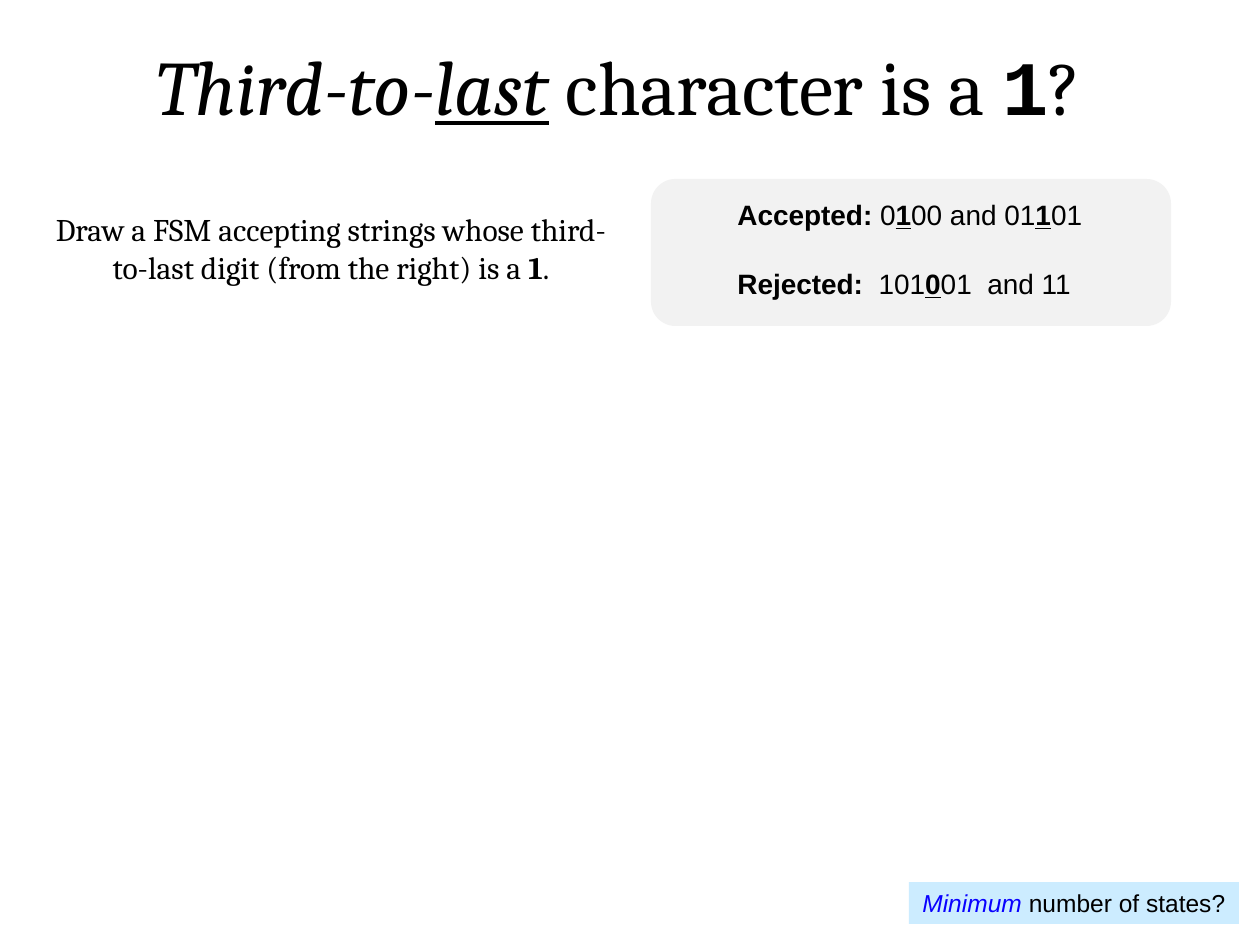
from pptx import Presentation
from pptx.dml.color import RGBColor
from pptx.enum.shapes import MSO_SHAPE
from pptx.enum.text import MSO_ANCHOR, MSO_AUTO_SIZE, PP_ALIGN
from pptx.util import Pt

CENTER, LEFT = PP_ALIGN.CENTER, PP_ALIGN.LEFT
TOP, MIDDLE = MSO_ANCHOR.TOP, MSO_ANCHOR.MIDDLE
RECTANGLE, ROUNDED = MSO_SHAPE.RECTANGLE, MSO_SHAPE.ROUNDED_RECTANGLE
EMU_PER_PX = 914400 / 126
TITLE_ONLY = 5


def px(*lengths):
    return [round(length * EMU_PER_PX) for length in lengths]


def write(para, text, size, font="Arial", color="000000", bold=False, italic=False, underline=False):
    span = para.add_run()
    span.text = text
    span.font.size = Pt(size)
    span.font.name = font
    span.font.color.rgb = RGBColor.from_string(color)
    span.font.bold = bold
    span.font.italic = italic
    span.font.underline = underline


deck = Presentation()
deck.slide_width, deck.slide_height = px(1260, 945)
page = deck.slides.add_slide(deck.slide_layouts[TITLE_ONLY])

# Filled panels
panels = []
for kind, bounds, fill in [
    (ROUNDED, (651, 179, 520, 147), "F2F2F2"),
    (RECTANGLE, (909, 882, 330, 42), "CCECFF"),
]:
    panel = page.shapes.add_shape(kind, *px(*bounds))
    panel.shadow.inherit = False
    panel.fill.solid()
    panel.fill.fore_color.rgb = RGBColor.from_string(fill)
    panel.line.fill.background()
    panels.append(panel)
states_tag = panels[1]

# Text frames
title = page.shapes.title
title.left, title.top, title.width, title.height = px(66, 32, 1106, 105)
task = page.shapes.add_textbox(*px(43, 204, 576, 89))
examples = page.shapes.add_textbox(*px(725, 203, 435, 107))
for box, align, anchor, wrap in [
    (title, CENTER, TOP, True),
    (task, CENTER, TOP, True),
    (examples, LEFT, TOP, True),
    (states_tag, CENTER, MIDDLE, False),
]:
    frame = box.text_frame
    frame.auto_size = MSO_AUTO_SIZE.NONE
    frame.word_wrap = wrap
    frame.vertical_anchor = anchor
    frame.paragraphs[0].alignment = align

para = title.text_frame.paragraphs[0]
write(para, "Third-to-", 44, "Cambria", italic=True)
write(para, "last", 44, "Cambria", italic=True, underline=True)
write(para, " character is a ", 44, "Cambria")
write(para, "1", 44, "Courier New", bold=True)
write(para, "?", 44, "Cambria")

para = task.text_frame.paragraphs[0]
write(para, "Draw a FSM accepting strings whose third-to-last digit (from the right) is a ", 18, "Cambria")
write(para, "1", 18, "Cambria", bold=True)
write(para, ".", 18, "Cambria")

# Each example line: label, digits before, the third-to-last digit, the rest
accepted = examples.text_frame.paragraphs[0]
rejected = examples.text_frame.add_paragraph()
rejected.space_before = Pt(28)
for para, label, parts in [
    (accepted, "Accepted: ", ["0", "1", "00 and 01", "1", "01"]),
    (rejected, "Rejected:  ", ["101", "0", "01  and 11"]),
]:
    para.line_spacing = 0.6
    write(para, label, 16, bold=True)
    for index, part in enumerate(parts):
        marked = index % 2 == 1
        write(para, part, 16, bold=marked, underline=marked)

para = states_tag.text_frame.paragraphs[0]
write(para, "Minimum ", 14, color="0900FF", italic=True)
write(para, "number of states?", 14)

deck.save("out.pptx")
